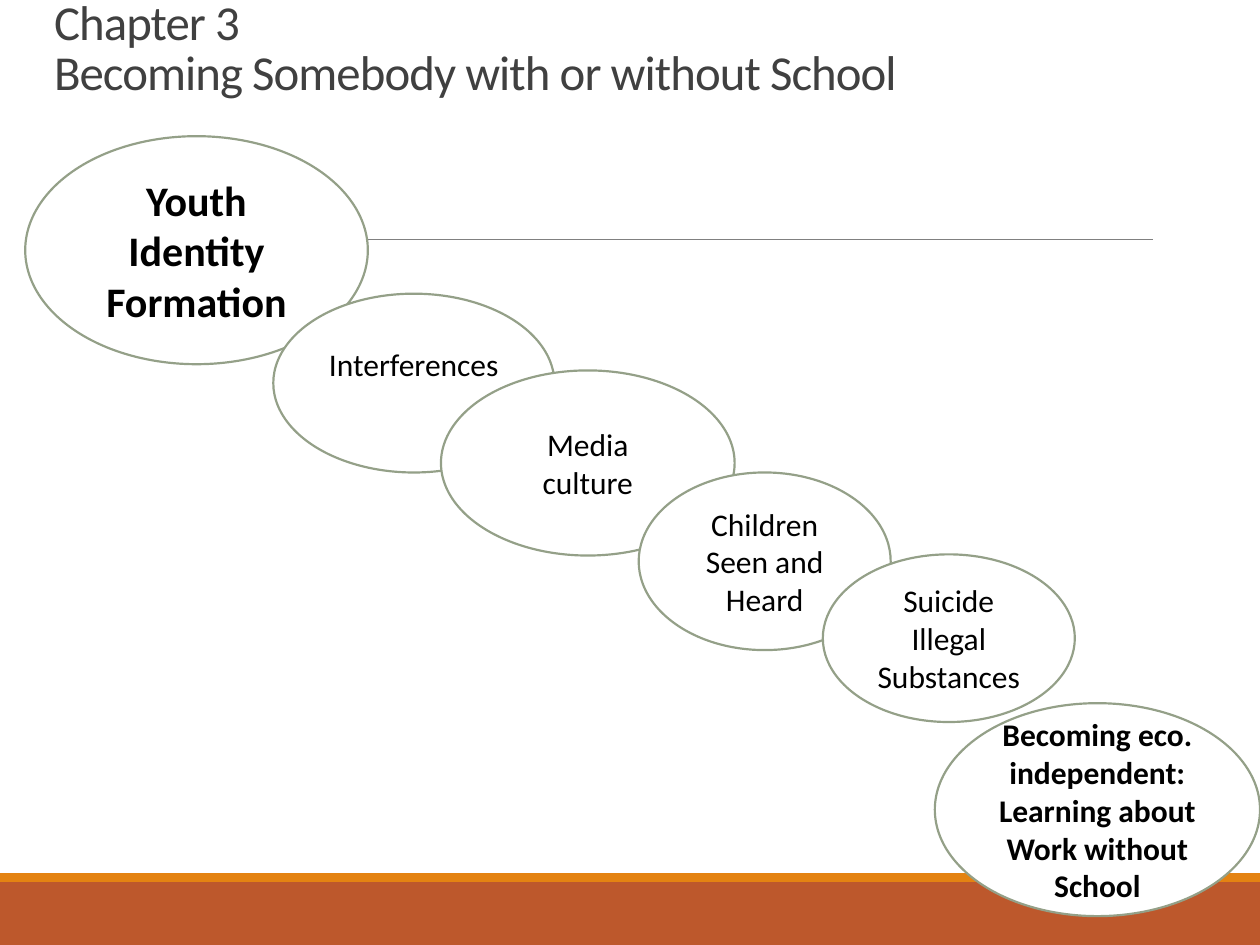
from dataclasses import dataclass

from lxml.etree import SubElement
from pptx import Presentation
from pptx.dml.color import RGBColor
from pptx.enum.shapes import MSO_CONNECTOR as Connector, MSO_SHAPE as Shape
from pptx.enum.text import MSO_ANCHOR as Anchor, PP_ALIGN as Align
from pptx.oxml.ns import qn
from pptx.util import Pt


@dataclass(frozen=True)
class Theme:
    font: str = "Calibri"
    title_color: str = "404040"
    text_color: str = "000000"
    paper: str = "FFFFFF"
    outline: str = "94A088"
    rule: str = "808080"
    title_size: float = 27.9
    lead_size: float = 24
    body_size: float = 18


THEME = Theme()
TITLE = ["Chapter 3", "Becoming Somebody with or without School"]
TITLE_FRAME = (23.8, 7.9, 660, 103.7)
TITLE_BOTTOM = 54
RULE = (70.6, 136.8, 658.8, 136.8)
BANDS = [
    ((0, 504, 720, 36), "BD582C"),
    ((0, 499, 720, 5), "E48312"),
]
STAGES = [
    ((14.4, 77.8, 195.8, 130.3), ["Youth Identity Formation"], THEME.lead_size, True, 3.6),
    ((156.2, 167.8, 160.6, 102.2), ["Interferences"], THEME.body_size, False, 25.6),
    ((252, 211.7, 167.8, 105.8), ["Media", "culture"], THEME.body_size, False, 3.6),
    ((365, 270, 144, 101.5), ["Children Seen and Heard"], THEME.body_size, False, 3.6),
    ((470.2, 316.8, 144, 95.8), ["Suicide", "Illegal Substances"], THEME.body_size, False, 3.6),
    ((534.2, 401.8, 185.8, 121.7),
     ["Becoming eco. independent:", "Learning about Work without School"],
     THEME.body_size, True, 3.6),
]


def points(values):
    return [Pt(value) for value in values]


def color(value):
    return RGBColor.from_string(value)


def add_span(para, text, size, ink, bold=False):
    span = para.add_run()
    span.text = text
    span.font.name = THEME.font
    span.font.size = Pt(size)
    span.font.bold = bold
    span.font.color.rgb = color(ink)
    return span


def add_solid(page, kind, frame, fill, outline=None):
    shape = page.shapes.add_shape(kind, *points(frame))
    shape.shadow.inherit = False
    shape.fill.solid()
    shape.fill.fore_color.rgb = color(fill)
    if outline:
        shape.line.color.rgb = color(outline)
        shape.line.width = Pt(1.25)
    else:
        shape.line.fill.background()
    return shape


def add_rule(page):
    rule = page.shapes.add_connector(Connector.STRAIGHT, *points(RULE))
    rule.line.color.rgb = color(THEME.rule)
    rule.line.width = Pt(0.5)
    SubElement(rule.element.spPr, qn("a:effectLst"))


def add_title(page):
    box = page.shapes.add_textbox(*points(TITLE_FRAME)).text_frame
    box.word_wrap = True
    box.vertical_anchor = Anchor.BOTTOM
    box.margin_bottom = Pt(TITLE_BOTTOM)
    para = box.paragraphs[0]
    para.line_spacing = 0.85
    for index, text in enumerate(TITLE):
        if index:
            para.add_line_break()
        span = add_span(para, text, THEME.title_size, THEME.title_color)
        span.font._element.set("spc", "-50")


def add_stage(page, frame, lines, size, bold, bottom):
    box = add_solid(page, Shape.OVAL, frame, THEME.paper, THEME.outline).text_frame
    box.word_wrap = True
    box.vertical_anchor = Anchor.MIDDLE
    box.margin_bottom = Pt(bottom)
    for index, text in enumerate(lines):
        para = box.add_paragraph() if index else box.paragraphs[0]
        para.alignment = Align.CENTER
        add_span(para, text, size, THEME.text_color, bold)


def main():
    """Build the chapter slide with its descending chain of stages."""
    deck = Presentation()
    deck.slide_width, deck.slide_height = Pt(720), Pt(540)
    page = deck.slides.add_slide(deck.slide_layouts[6])
    for frame, fill in BANDS:
        add_solid(page, Shape.RECTANGLE, frame, fill)
    add_rule(page)
    add_title(page)
    for stage in STAGES:
        add_stage(page, *stage)
    deck.save("out.pptx")


if __name__ == "__main__":
    main()
